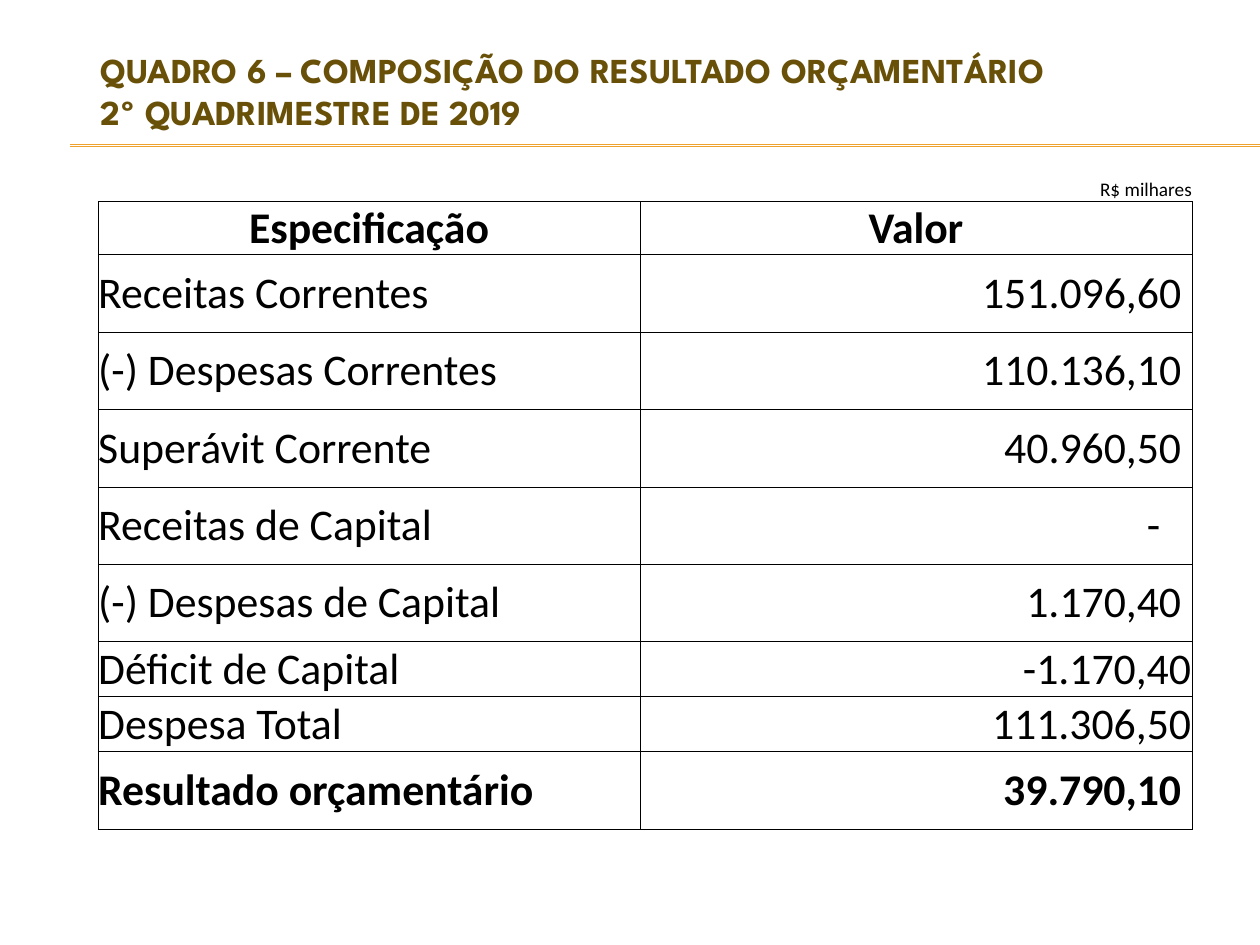
from lxml import etree
from pptx import Presentation
from pptx import util as u
from pptx.dml.color import RGBColor
from pptx.enum import shapes, text
from pptx.oxml import ns

BLACK = RGBColor(0x00, 0x00, 0x00)
BROWN = RGBColor(0x69, 0x50, 0x08)
GOLD = RGBColor(0xF0, 0xA2, 0x2E)

TITLE = "QUADRO 6 – COMPOSIÇÃO DO RESULTADO ORÇAMENTÁRIO\v2º QUADRIMESTRE DE 2019"
UNIT = "R$ milhares"
HEADERS = ("Especificação", "Valor")
TALL, SHORT = 1.56, 1.11
ROWS = [
    ("Receitas Correntes", "151.096,60", TALL, 0.22),
    ("(-) Despesas Correntes", "110.136,10", TALL, 0.22),
    ("Superávit Corrente", "40.960,50", TALL, 0.22),
    ("Receitas de Capital", "-", TALL, 0.64),
    ("(-) Despesas de Capital", "1.170,40", TALL, 0.22),
    ("Déficit de Capital", "-1.170,40", SHORT, 0.02),
    ("Despesa Total", "111.306,50", SHORT, 0.02),
    ("Resultado orçamentário", "39.790,10", TALL, 0.22),
]
COLUMN_WIDTHS = (10.92, 5.31, 5.82)
ROW_HEIGHTS = [0.89, 1.07] + [row[2] for row in ROWS]
RULE_HEIGHTS = (2.92, 2.95)

LEFT, CENTER, RIGHT = text.PP_ALIGN.LEFT, text.PP_ALIGN.CENTER, text.PP_ALIGN.RIGHT
MIDDLE, BOTTOM = text.MSO_ANCHOR.MIDDLE, text.MSO_ANCHOR.BOTTOM


def write(frame, content, font="Calibri", size=25, color=BLACK, bold=False, align=LEFT):
    frame.text = content
    paragraph = frame.paragraphs[0]
    paragraph.alignment = align
    for run in paragraph.runs:
        run.font.name = font
        run.font.size = u.Pt(size)
        run.font.bold = bold
        run.font.color.rgb = color


def set_borders(cell, visible):
    properties = cell._tc.get_or_add_tcPr()
    for side in "LRTB":
        line = etree.SubElement(properties, ns.qn(f"a:ln{side}"), w=str(u.Pt(0.5)))
        if side in visible:
            fill = etree.SubElement(line, ns.qn("a:solidFill"))
            etree.SubElement(fill, ns.qn("a:srgbClr"), val=str(BLACK))
        else:
            etree.SubElement(line, ns.qn("a:noFill"))


def fill_cell(cell, content, anchor=MIDDLE, right=0, **style):
    write(cell.text_frame, content, **style)
    cell.vertical_anchor = anchor
    cell.margin_right = u.Cm(right)


def add_rules(slide, width):
    for height in RULE_HEIGHTS:
        rule = slide.shapes.add_connector(
            shapes.MSO_CONNECTOR.STRAIGHT, u.Cm(1.42), u.Cm(height), width, u.Cm(height))
        rule.line.color.rgb = GOLD
        rule.line.width = u.Pt(0.75)
        etree.SubElement(rule._element.spPr, ns.qn("a:effectLst"))


def add_title(slide):
    title = slide.shapes.title
    title.left, title.top, title.width, title.height = (
        u.Cm(length) for length in (1.78, 1.4, 21.59, 0.84))
    frame = title.text_frame
    frame.word_wrap = True
    frame.auto_size = text.MSO_AUTO_SIZE.NONE
    frame.vertical_anchor = MIDDLE
    write(frame, TITLE, font="League Spartan", size=20, color=BROWN, bold=True)


def add_budget_table(slide):
    table = slide.shapes.add_table(
        len(ROW_HEIGHTS), len(COLUMN_WIDTHS), u.Cm(1.98), u.Cm(3.17),
        u.Cm(sum(COLUMN_WIDTHS)), u.Cm(sum(ROW_HEIGHTS))).table
    table.first_row = table.horz_banding = False
    for column, width in zip(table.columns, COLUMN_WIDTHS):
        column.width = u.Cm(width)
    for index, (row, height) in enumerate(zip(table.rows, ROW_HEIGHTS)):
        row.height = u.Cm(height)
        for cell in row.cells:
            set_borders(cell, "LRTB" if index else "B")
            cell.fill.background()
            cell.margin_left = cell.margin_right = cell.margin_top = cell.margin_bottom = 0
        if index:
            row.cells[1].merge(row.cells[2])

    fill_cell(table.cell(0, 2), UNIT, anchor=BOTTOM, size=11, align=RIGHT)
    for column, header in enumerate(HEADERS):
        fill_cell(table.cell(1, column), header, anchor=BOTTOM, bold=True, align=CENTER)
    for index, (label, value, _, indent) in enumerate(ROWS, start=2):
        bold = index == len(ROW_HEIGHTS) - 1
        fill_cell(table.cell(index, 0), label, bold=bold)
        fill_cell(table.cell(index, 1), value, right=indent, bold=bold, align=RIGHT)


def main():
    presentation = Presentation()
    presentation.slide_width, presentation.slide_height = u.Cm(25.4), u.Cm(19.05)
    slide = presentation.slides.add_slide(presentation.slide_layouts[5])
    add_rules(slide, presentation.slide_width)
    add_title(slide)
    add_budget_table(slide)
    presentation.save("out.pptx")


if __name__ == "__main__":
    main()
